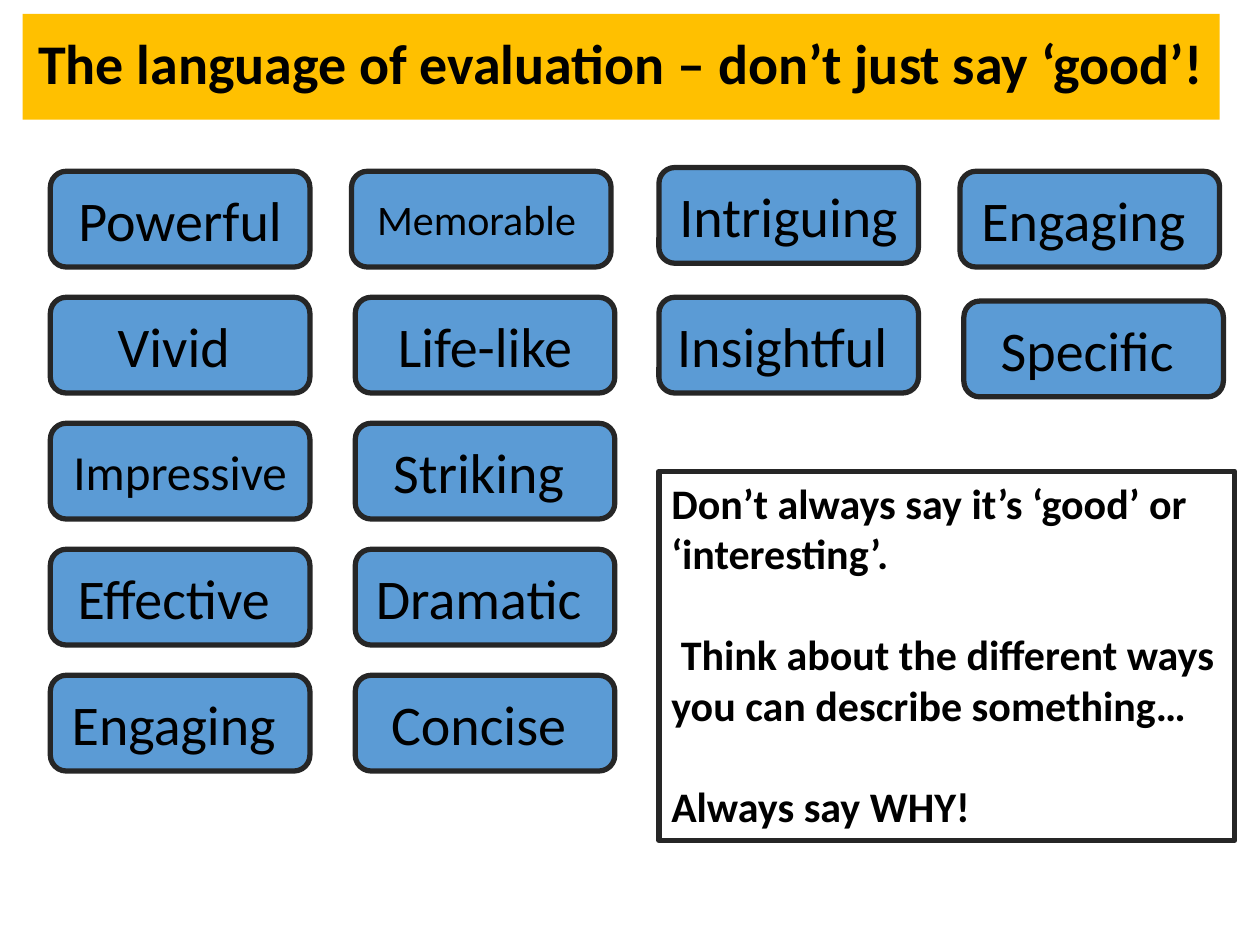
"""Build a slide of evaluative words to use instead of 'good'."""
from dataclasses import dataclass

from pptx import Presentation
from pptx.dml.color import RGBColor
from pptx.enum.shapes import MSO_SHAPE
from pptx.enum.text import MSO_ANCHOR, MSO_AUTO_SIZE, PP_ALIGN
from pptx.shapes.autoshape import Shape
from pptx.slide import Slide
from pptx.text.text import TextFrame
from pptx.util import Inches, Pt

AMBER = RGBColor(0xFF, 0xC0, 0x00)
BLUE = RGBColor(0x5B, 0x9B, 0xD5)
CHARCOAL = RGBColor(0x26, 0x26, 0x26)
BLACK = RGBColor(0x00, 0x00, 0x00)
FONT = "Calibri"

COLUMN_LEFTS = (0.4, 2.82, 5.23, 7.62)
FIRST_ROW_TOP = 1.36
ROW_PITCH = 1.0
CARD_WIDTH, CARD_HEIGHT = 2.06, 0.76


@dataclass(frozen=True)
class WordCard:
    word: str
    size: int = 32
    shift_x: float = 0
    shift_y: float = 0


WORD_COLUMNS = (
    (
        WordCard("Powerful"),
        WordCard("Vivid "),
        WordCard("Impressive", size=28),
        WordCard("Effective "),
        WordCard("Engaging "),
    ),
    (
        WordCard("Memorable ", size=24, shift_x=-0.03),
        WordCard("Life-like"),
        WordCard("Striking "),
        WordCard("Dramatic "),
        WordCard("Concise "),
    ),
    (WordCard("Intriguing ", shift_y=-0.03), WordCard("Insightful ")),
    (WordCard("Engaging "), WordCard("Specific ", shift_x=0.03, shift_y=0.03)),
)
ADVICE = (
    "Don’t always say it’s ‘good’ or ‘interesting’.",
    " Think about the different ways you can describe something…",
    "Always say WHY!",
)


def write_text(
    frame: TextFrame,
    *lines: str,
    size: int = 32,
    bold: bool = False,
    align: PP_ALIGN = PP_ALIGN.CENTER,
    anchor: MSO_ANCHOR = MSO_ANCHOR.MIDDLE,
    fit: MSO_AUTO_SIZE = MSO_AUTO_SIZE.NONE,
    gap: float = 0,
    line_spacing: float = 1.0,
) -> None:
    """Fill a text frame with one formatted paragraph per line."""
    frame.word_wrap = True
    frame.auto_size = fit
    frame.vertical_anchor = anchor
    for index, line in enumerate(lines):
        paragraph = frame.add_paragraph() if index else frame.paragraphs[0]
        paragraph.alignment = align
        paragraph.line_spacing = line_spacing
        paragraph.space_before = Pt(gap if index else 0)
        run = paragraph.add_run()
        run.text = line
        run.font.name = FONT
        run.font.size = Pt(size)
        run.font.bold = bold
        run.font.color.rgb = BLACK


def outline(panel: Shape) -> None:
    """Give a panel the shared dark border."""
    panel.line.color.rgb = CHARCOAL
    panel.line.width = Pt(3)


def add_title(slide: Slide) -> None:
    """Place the heading on its amber band."""
    title = slide.shapes.title
    title.left, title.top = Inches(0.18), Inches(0.11)
    title.width, title.height = Inches(9.5), Inches(0.84)
    title.fill.solid()
    title.fill.fore_color.rgb = AMBER
    write_text(
        title.text_frame,
        "The language of evaluation – don’t just say ‘good’!",
        bold=True,
        line_spacing=0.9,
    )


def add_word_card(slide: Slide, card: WordCard, left: float, top: float) -> None:
    """Draw one rounded card holding a word."""
    panel = slide.shapes.add_shape(
        MSO_SHAPE.ROUNDED_RECTANGLE,
        Inches(left + card.shift_x),
        Inches(top + card.shift_y),
        Inches(CARD_WIDTH),
        Inches(CARD_HEIGHT),
    )
    panel.shadow.inherit = False
    panel.fill.solid()
    panel.fill.fore_color.rgb = BLUE
    outline(panel)
    write_text(panel.text_frame, card.word, size=card.size)


def add_advice(slide: Slide) -> None:
    """Draw the bordered box of advice."""
    advice = slide.shapes.add_textbox(
        Inches(5.23), Inches(3.74), Inches(4.57), Inches(2.93)
    )
    outline(advice)
    write_text(
        advice.text_frame,
        *ADVICE,
        size=24,
        bold=True,
        align=PP_ALIGN.LEFT,
        anchor=MSO_ANCHOR.TOP,
        fit=MSO_AUTO_SIZE.SHAPE_TO_FIT_TEXT,
        gap=29,
    )


def main() -> None:
    """Assemble and save the slide."""
    deck = Presentation()
    deck.slide_width, deck.slide_height = Inches(10), Inches(7.5)
    slide = deck.slides.add_slide(deck.slide_layouts.get_by_name("Title Only"))
    add_title(slide)
    for left, cards in zip(COLUMN_LEFTS, WORD_COLUMNS):
        for row, card in enumerate(cards):
            add_word_card(slide, card, left, FIRST_ROW_TOP + row * ROW_PITCH)
    add_advice(slide)
    deck.save("out.pptx")


if __name__ == "__main__":
    main()
